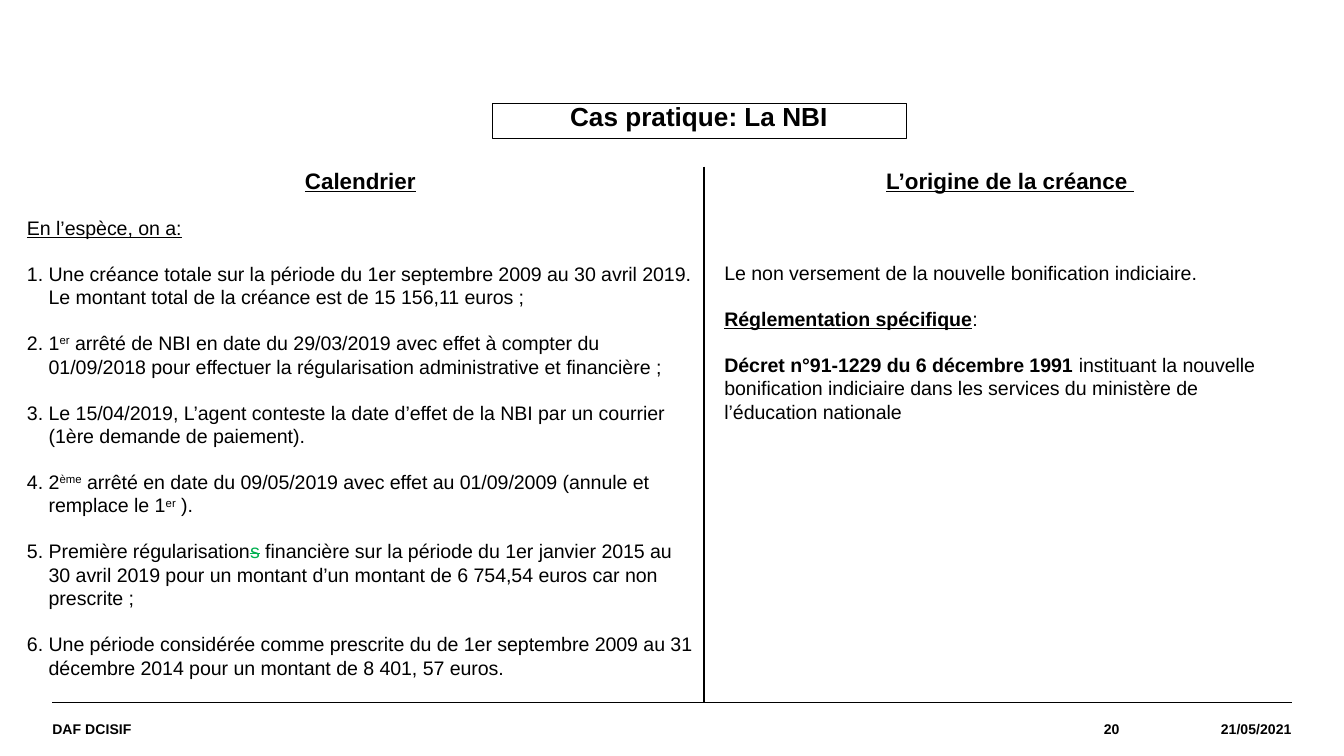
"""Build the slide on the NBI case study, with its calendar and the origin of the claim."""
from dataclasses import dataclass, field

from lxml import etree
from pptx import Presentation
from pptx.dml.color import RGBColor
from pptx.enum.shapes import MSO_CONNECTOR
from pptx.enum.text import MSO_ANCHOR, MSO_AUTO_SIZE, PP_ALIGN
from pptx.oxml.ns import qn
from pptx.util import Cm, Pt

STRAIGHT = MSO_CONNECTOR.STRAIGHT
LEFT, CENTER, RIGHT = PP_ALIGN.LEFT, PP_ALIGN.CENTER, PP_ALIGN.RIGHT
TOP, MIDDLE = MSO_ANCHOR.TOP, MSO_ANCHOR.MIDDLE
NO_AUTOFIT = MSO_AUTO_SIZE.NONE
TWO_CONTENT = 3

COLORS = {"text": "000000", "deleted": "00B050"}
FONT = "Arial"
BODY_SIZE, HEADING_SIZE, TITLE_SIZE, FOOTER_SIZE = 10.5, 12, 14, 7.5
MARGIN, RULE_TOP, RULE_RIGHT = 0.99, 13.28, 24.41
DIVIDER_LEFT, COLUMNS_TOP = 13.31, 3.15
FOOTER_HEIGHT = 0.99
NUMBER_INDENT = 0.41
SPACE_BEFORE, SPACE_AFTER, WIDE_SPACE_BEFORE = 4, 8, 28


@dataclass
class Span:
    text: str
    style: dict = field(default_factory=dict)


@dataclass
class Paragraph:
    spans: list[Span]
    align: PP_ALIGN = LEFT
    numbered: bool = False
    before: float = SPACE_BEFORE


@dataclass
class Column:
    left: float
    width: float
    height: float
    paragraphs: list[Paragraph]


@dataclass
class FooterItem:
    text: str
    left: float
    width: float
    align: PP_ALIGN


def heading(text: str) -> Paragraph:
    return Paragraph([Span(text, {"size": HEADING_SIZE, "bold": True, "underline": True})], CENTER)


def item(*spans: Span) -> Paragraph:
    return Paragraph(list(spans), numbered=True)


def superscript(text: str) -> Span:
    return Span(text, {"raised": True})


CALENDAR = Column(0.51, 12.6, 9.98, [
    heading("Calendrier"),
    Paragraph([Span("En l’espèce, on a:", {"underline": True})]),
    item(Span("Une créance totale sur la période du 1er septembre 2009 au 30 avril 2019. "
              "Le montant total de la créance est de 15 156,11 euros ;")),
    item(Span("1"), superscript("er"),
         Span(" arrêté de NBI en date du 29/03/2019 avec effet à compter du 01/09/2018 "
              "pour effectuer la régularisation administrative et financière ;")),
    item(Span("Le 15/04/2019, L’agent conteste la date d’effet de la NBI par un courrier "
              "(1ère demande de paiement).")),
    item(Span("2"), superscript("ème"),
         Span(" arrêté en date du 09/05/2019 avec effet au 01/09/2009 (annule et remplace le 1"),
         superscript("er"), Span(" ).")),
    item(Span("Première régularisation"), Span("s", {"color": "deleted", "struck": True}),
         Span(" financière sur la période du 1er janvier 2015 au 30 avril 2019 pour un montant "
              "d’un montant de 6 754,54 euros car non prescrite ;")),
    item(Span("Une période considérée comme prescrite du de 1er septembre 2009 au 31 décembre 2014 "
              "pour un montant de 8 401, 57 euros.")),
])
ORIGIN = Column(13.69, 10.8, 9.58, [
    heading("L’origine de la créance "),
    Paragraph([Span("Le non versement de la nouvelle bonification indiciaire.")],
              before=WIDE_SPACE_BEFORE),
    Paragraph([Span("Réglementation spécifique", {"bold": True, "underline": True}), Span(":")]),
    Paragraph([Span("Décret n°91-1229 du 6 décembre 1991 ", {"bold": True}),
               Span("instituant la nouvelle bonification indiciaire dans les services "
                    "du ministère de l’éducation nationale")]),
])
FOOTER = [
    FooterItem("DAF DCISIF", MARGIN, 16.41, LEFT),
    FooterItem("20", 17.4, 3.76, RIGHT),
    FooterItem("21/05/2021", 21.16, 3.25, RIGHT),
]


def add_span(para, text: str, *, size: float = BODY_SIZE, bold: bool = False,
             underline: bool = False, color: str = "text",
             raised: bool = False, struck: bool = False) -> None:
    span = para.add_run()
    span.text = text
    span.font.name = FONT
    span.font.size = Pt(size)
    span.font.bold = bold
    span.font.underline = underline
    span.font.color.rgb = RGBColor.from_string(COLORS[color])
    properties = span._r.get_or_add_rPr()
    if raised:
        properties.set("baseline", "30000")
    if struck:
        properties.set("strike", "sngStrike")


def place(box, left: float, top: float, width: float, height: float, anchor: MSO_ANCHOR):
    box.left, box.top, box.width, box.height = Cm(left), Cm(top), Cm(width), Cm(height)
    frame = box.text_frame
    frame.margin_left = frame.margin_top = frame.margin_right = frame.margin_bottom = 0
    frame.word_wrap = True
    frame.auto_size = NO_AUTOFIT
    frame.vertical_anchor = anchor
    return frame


def set_bullet(para, numbered: bool) -> None:
    properties = para._p.get_or_add_pPr()
    indent = Cm(NUMBER_INDENT) if numbered else 0
    properties.set("marL", str(indent))
    properties.set("indent", str(-indent))
    if numbered:
        etree.SubElement(properties, qn("a:buFont"), typeface="+mj-lt")
        etree.SubElement(properties, qn("a:buAutoNum"), type="arabicPeriod")
    else:
        etree.SubElement(properties, qn("a:buNone"))


def fill_column(box, column: Column) -> None:
    frame = place(box, column.left, COLUMNS_TOP, column.width, column.height, TOP)
    for index, paragraph in enumerate(column.paragraphs):
        para = frame.add_paragraph() if index else frame.paragraphs[0]
        set_bullet(para, paragraph.numbered)
        para.alignment = paragraph.align
        para.space_before = Pt(paragraph.before if index else 0)
        para.space_after = Pt(SPACE_AFTER)
        for span in paragraph.spans:
            add_span(para, span.text, **span.style)


def fill_title(box) -> None:
    frame = place(box, 9.3, 1.96, 7.82, 0.66, TOP)
    box.line.color.rgb = RGBColor.from_string(COLORS["text"])
    box.line.width = Pt(0.25)
    para = frame.paragraphs[0]
    para.alignment = CENTER
    para.line_spacing = 0.9
    add_span(para, "Cas pratique: La NBI", size=TITLE_SIZE, bold=True)


def add_footer_item(page, entry: FooterItem) -> None:
    box = page.shapes.add_textbox(0, 0, 0, 0)
    frame = place(box, entry.left, RULE_TOP, entry.width, FOOTER_HEIGHT, MIDDLE)
    para = frame.paragraphs[0]
    para.alignment = entry.align
    add_span(para, entry.text, size=FOOTER_SIZE, bold=True)


def add_rule(page, start: tuple[float, float], end: tuple[float, float], width: float) -> None:
    rule = page.shapes.add_connector(STRAIGHT, *map(Cm, start + end))
    rule.line.color.rgb = RGBColor.from_string(COLORS["text"])
    rule.line.width = Pt(width)
    etree.SubElement(rule._element.spPr, qn("a:effectLst"))


def main() -> None:
    deck = Presentation()
    deck.slide_width, deck.slide_height = Cm(25.4), Cm(14.29)
    page = deck.slides.add_slide(deck.slide_layouts[TWO_CONTENT])
    title, calendar, origin = page.placeholders
    fill_title(title)
    fill_column(calendar, CALENDAR)
    fill_column(origin, ORIGIN)
    add_rule(page, (MARGIN, RULE_TOP), (RULE_RIGHT, RULE_TOP), 0.8)
    add_rule(page, (DIVIDER_LEFT, COLUMNS_TOP), (DIVIDER_LEFT, RULE_TOP), 1)
    for entry in FOOTER:
        add_footer_item(page, entry)
    deck.save("out.pptx")


if __name__ == "__main__":
    main()
